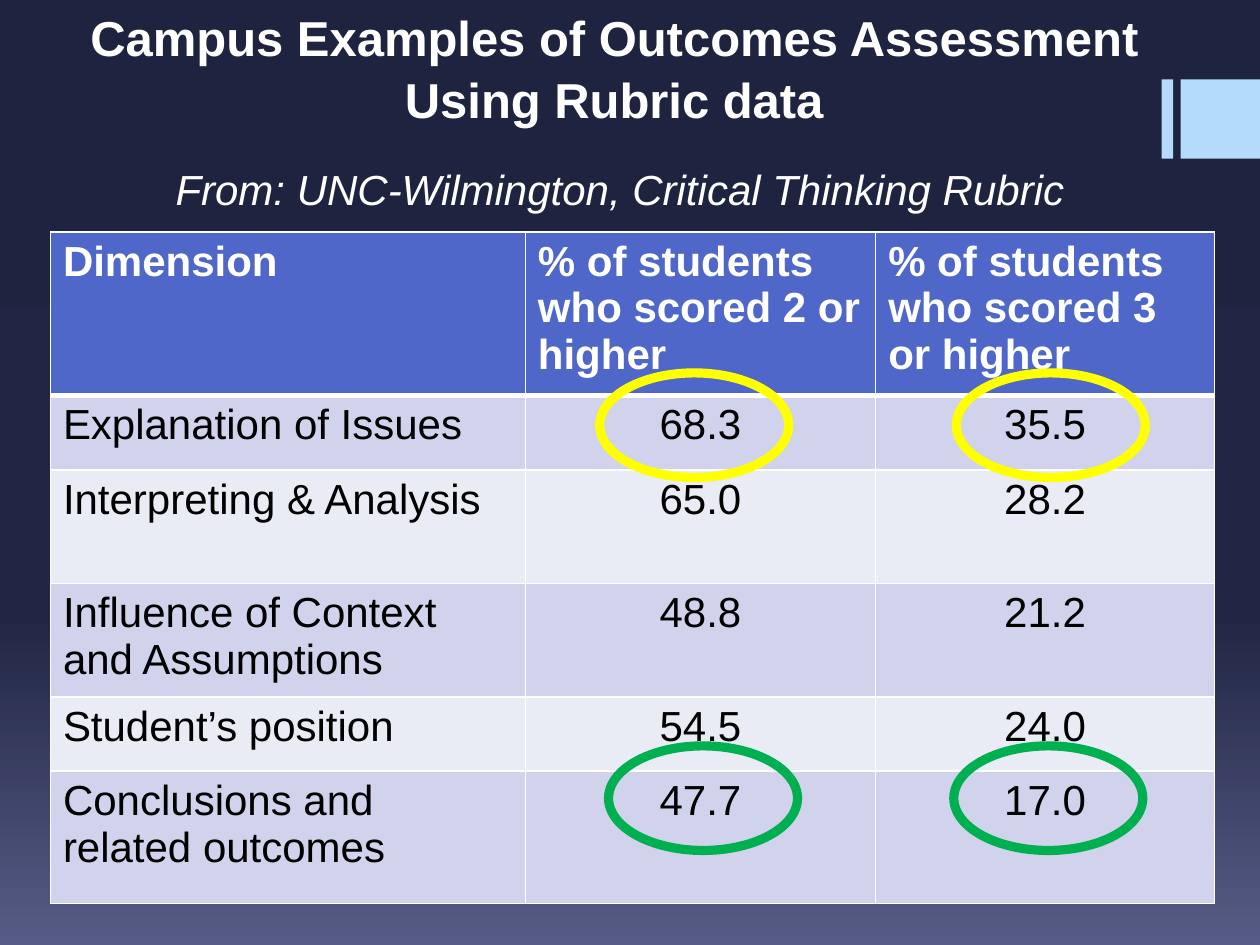
"""Build a slide with a table of rubric scores and circled highlights."""
from copy import deepcopy

from lxml.etree import SubElement
from pptx import Presentation
from pptx.dml.color import RGBColor
from pptx.enum.shapes import MSO_SHAPE
from pptx.enum.text import MSO_ANCHOR, MSO_AUTO_SIZE, PP_ALIGN
from pptx.oxml.ns import qn
from pptx.util import Inches, Pt

THEME = {
    "font": "Arial", "title": 28, "body": 24, "ring_width": 5.25,
    "white": "FFFFFF", "black": "000000", "accent": "B4DCFA",
    "header": "4E67C8", "bands": ("D0D3EB", "E9EBF5"),
    "high": "FFFF00", "low": "00B050",
    "background": ((0, "1E233F"), (0.65, "202643"), (1, "575C86")),
}
TITLE = "Campus Examples of Outcomes Assessment Using Rubric data"
SOURCE = "From: UNC-Wilmington, Critical Thinking Rubric"
ROWS = [
    ("Dimension", "% of students who scored 2 or higher", "% of students who scored 3 or higher"),
    ("Explanation of Issues", "68.3", "35.5"),
    ("Interpreting & Analysis", "65.0", "28.2"),
    ("Influence of Context and Assumptions", "48.8", "21.2"),
    ("Student’s position", "54.5", "24.0"),
    ("Conclusions and related outcomes", "47.7", "17.0"),
]
COL_WIDTHS = (3.77, 2.78, 2.69)
ROW_HEIGHTS = (1.3, 0.59, 0.9, 0.9, 0.59, 1.05)
ACCENT_BARS = [(9.22, 0.09), (9.37, 0.63)]
RINGS = [(4.76, 2.96, "high"), (7.59, 2.96, "high"), (7.57, 5.92, "low"), (4.83, 5.92, "low")]


def rgb(value):
    return RGBColor.from_string(value)


def write(tf, text, size=THEME["body"], color=THEME["white"], bold=False, italic=False,
          align=PP_ALIGN.LEFT, spacing=None):
    tf.word_wrap = True
    p = tf.paragraphs[0]
    p.alignment = align
    p.line_spacing = spacing
    r = p.add_run()
    r.text = text
    font = r.font
    font.name, font.size, font.color.rgb = THEME["font"], Pt(size), rgb(color)
    font.bold, font.italic = bold, italic


def paint_background(slide):
    fill = slide.background.fill
    fill.gradient()
    fill.gradient_angle = 270
    stops = slide.element.find(".//" + qn("a:gsLst"))
    stops.append(deepcopy(stops[0]))
    for stop, (position, color) in zip(fill.gradient_stops, THEME["background"]):
        stop.position, stop.color.rgb = position, rgb(color)


def add_shape(slide, kind, x, y, w, h, fill=None, line=None):
    sp = slide.shapes.add_shape(kind, *map(Inches, (x, y, w, h)))
    sp.shadow.inherit = False
    if fill:
        sp.fill.solid()
        sp.fill.fore_color.rgb = rgb(fill)
    else:
        sp.fill.background()
    if line:
        sp.line.color.rgb, sp.line.width = rgb(line), Pt(THEME["ring_width"])
    else:
        sp.line.fill.background()


def set_borders(cell, bottom=1, top=1):
    props = cell._tc.get_or_add_tcPr()
    widths = {"lnL": 1, "lnR": 1, "lnT": top, "lnB": bottom}
    for i, (side, width) in enumerate(widths.items()):
        ln = SubElement(props, qn("a:" + side), w=str(Pt(width)))
        SubElement(SubElement(ln, qn("a:solidFill")), qn("a:srgbClr"), val=THEME["white"])
        props.insert(i, ln)


def add_scores(slide):
    frame = slide.shapes.add_table(len(ROWS), len(COL_WIDTHS), Inches(0.4), Inches(1.84),
                                   Inches(sum(COL_WIDTHS)), Inches(sum(ROW_HEIGHTS)))
    table = frame.table
    for col, width in zip(table.columns, COL_WIDTHS):
        col.width = Inches(width)
    for i, (row, height) in enumerate(zip(ROWS, ROW_HEIGHTS)):
        table.rows[i].height = Inches(height)
        header = i == 0
        for j, text in enumerate(row):
            cell = table.cell(i, j)
            cell.fill.solid()
            cell.fill.fore_color.rgb = rgb(THEME["header"] if header else THEME["bands"][(i - 1) % 2])
            set_borders(cell, bottom=3 if header else 1, top=3 if i == 1 else 1)
            write(cell.text_frame, text, bold=header,
                  color=THEME["white" if header else "black"],
                  align=PP_ALIGN.CENTER if j and not header else PP_ALIGN.LEFT)


def main():
    prs = Presentation()
    prs.slide_width, prs.slide_height = Inches(10), Inches(7.5)
    slide = prs.slides.add_slide(prs.slide_layouts[5])
    paint_background(slide)
    for x, width in ACCENT_BARS:
        add_shape(slide, MSO_SHAPE.RECTANGLE, x, 0.63, width, 0.63, fill=THEME["accent"])

    title = slide.shapes.title
    title.left, title.top, title.width, title.height = map(Inches, (0.25, 0.17, 9.25, 0.9))
    tf = title.text_frame
    tf.auto_size, tf.vertical_anchor = MSO_AUTO_SIZE.NONE, MSO_ANCHOR.BOTTOM
    write(tf, TITLE, size=THEME["title"], bold=True, align=PP_ALIGN.CENTER, spacing=1.05)

    add_scores(slide)
    box = slide.shapes.add_textbox(*map(Inches, (0.63, 1.25, 8.58, 0.5)))
    box.text_frame.auto_size = MSO_AUTO_SIZE.SHAPE_TO_FIT_TEXT
    write(box.text_frame, SOURCE, italic=True, align=PP_ALIGN.CENTER)
    for x, y, level in RINGS:
        add_shape(slide, MSO_SHAPE.OVAL, x, y, 1.5, 0.83, line=THEME[level])
    prs.save("out.pptx")


if __name__ == "__main__":
    main()
